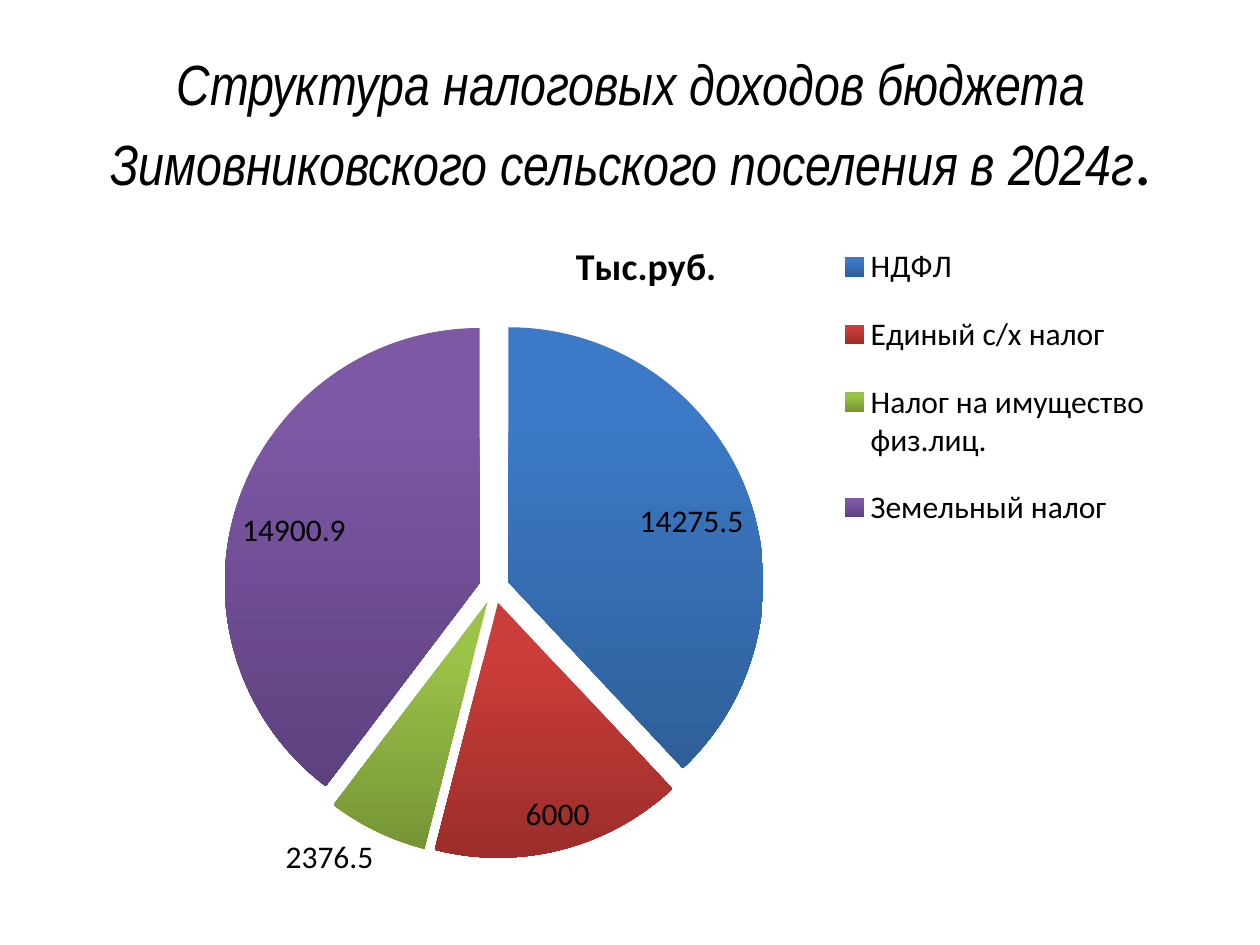
from lxml import etree
from pptx import Presentation
from pptx.chart.data import CategoryChartData
from pptx.dml.color import RGBColor
from pptx.enum.chart import XL_CHART_TYPE, XL_LABEL_POSITION, XL_LEGEND_POSITION
from pptx.enum.text import MSO_ANCHOR, PP_ALIGN
from pptx.oxml import parse_xml
from pptx.oxml.ns import nsdecls, qn
from pptx.util import Inches, Pt

# Tax, amount, gradient top colour, gradient bottom colour
TAXES = [
    ("НДФЛ", 14275.5, "3C7AC7", "2E5F99"),
    ("Единый с/х налог", 6000, "CB3D3A", "9B2D2A"),
    ("Налог на имущество физ.лиц.", 2376.5, "9BC348", "769535"),
    ("Земельный налог", 14900.9, "7D58A5", "5D417E"),
]


def rgb(value):
    return RGBColor.from_string(value)


def style_font(font, name, size, bold=False, italic=False):
    font.name, font.size = name, Pt(size)
    font.bold, font.italic = bold, italic
    font.color.rgb = rgb("000000")


def set_layout(element, before, **fractions):
    """Place a chart part by fractions of the chart's size."""
    for old in element.findall(qn("c:layout")):
        element.remove(old)
    layout = parse_xml(f"<c:layout {nsdecls('c')}><c:manualLayout/></c:layout>")
    manual = layout[0]
    if "w" in fractions and element.tag == qn("c:plotArea"):
        etree.SubElement(manual, qn("c:layoutTarget")).set("val", "inner")
    for axis in ("x", "y"):
        etree.SubElement(manual, qn(f"c:{axis}Mode")).set("val", "edge")
    for key in ("x", "y", "w", "h"):
        if key in fractions:
            etree.SubElement(manual, qn(f"c:{key}")).set("val", str(fractions[key]))
    element.insert(before, layout)


def add_title(slide, x, y, w, h):
    tf = slide.shapes.add_textbox(x, y, w, h).text_frame
    tf.word_wrap = True
    tf.vertical_anchor = MSO_ANCHOR.MIDDLE
    p = tf.paragraphs[0]
    p.alignment = PP_ALIGN.CENTER
    r = p.add_run()
    r.text = "Структура налоговых доходов бюджета Зимовниковского сельского поселения в 2024г"
    style_font(r.font, "Arial Narrow", 32.4, italic=True)
    r = p.add_run()
    r.text = "."
    style_font(r.font, "Calibri", 39.6)


def add_tax_pie(slide, x, y, w, h):
    data = CategoryChartData()
    data.categories = [tax[0] for tax in TAXES]
    data.add_series("Тыс.руб.", [tax[1] for tax in TAXES])
    chart = slide.shapes.add_chart(XL_CHART_TYPE.PIE, x, y, w, h, data).chart
    style_font(chart.font, "Calibri", 18)

    # Chart title
    chart.has_title = True
    p = chart.chart_title.text_frame.paragraphs[0]
    p.text = "Тыс.руб."
    style_font(p.font, "Calibri", 21.6, bold=True)
    set_layout(chart.chart_title._element, 1, x=0.43, y=0.04)

    # Legend
    chart.has_legend = True
    legend = chart.legend
    legend.position = XL_LEGEND_POSITION.RIGHT
    legend.include_in_layout = False
    style_font(legend.font, "Calibri", 18)
    set_layout(legend._element, 1, x=0.66, y=0.02, w=0.28, h=0.48)

    # Slices
    plot = chart.plots[0]
    plot.vary_by_categories = True
    set_layout(chart._chartSpace.chart.plotArea, 0, x=0.13, y=0.16, w=0.47, h=0.77)
    series = plot.series[0]
    for i, (_, _, top, bottom) in enumerate(TAXES):
        fill = series.points[i].format.fill
        fill.gradient()
        fill.gradient_angle = 270
        for stop, position, color in zip(fill.gradient_stops, (0.2, 1), (top, bottom)):
            stop.position = position
            stop.color.rgb = rgb(color)
    explosion = parse_xml(f'<c:explosion {nsdecls("c")} val="6"/>')
    series._element.find(qn("c:dPt")).addprevious(explosion)

    # Value labels
    plot.has_data_labels = True
    labels = plot.data_labels
    labels.show_value = True
    labels.show_percentage = False
    labels.number_format, labels.number_format_is_linked = "General", False
    labels.position = XL_LABEL_POSITION.BEST_FIT
    style_font(labels.font, "Calibri", 18)


def main():
    prs = Presentation()
    prs.slide_width, prs.slide_height = Inches(10), Inches(7.5)
    slide = prs.slides.add_slide(prs.slide_layouts[6])
    add_title(slide, Inches(0.51), Inches(0.36), Inches(9), Inches(1.25))
    add_tax_pie(slide, Inches(0.59), Inches(1.62), Inches(9.13), Inches(5.59))
    prs.save("out.pptx")


if __name__ == "__main__":
    main()
